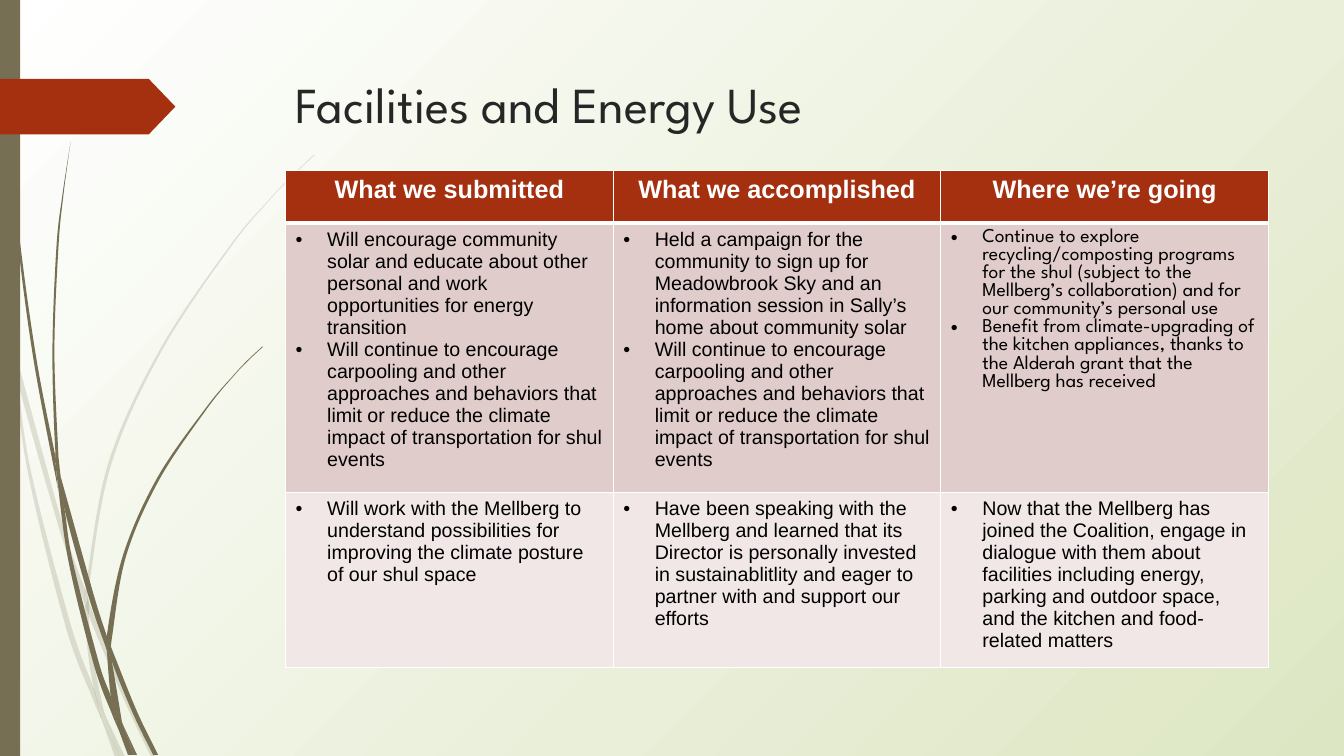
import lxml.etree
import pptx
import pptx.dml.color
import pptx.enum.shapes
import pptx.enum.text
import pptx.oxml
import pptx.oxml.ns
import pptx.util

Pt = pptx.util.Pt
qn = pptx.oxml.ns.qn
SubElement = lxml.etree.SubElement

COLORS = {
    "olive": "766F54", "rust": "A53010", "title": "262626",
    "black": "000000", "white": "FFFFFF", "mist": "DDE6C3",
    "rose": "E0CCCA", "blush": "F0E7E6",
}
SANS, DISPLAY = "Arial", "League Spartan"
CARPOOLING = ("Will continue to encourage carpooling and other approaches and behaviors "
              "that limit or reduce the climate impact of transportation for shul events")
HEADINGS = ["What we submitted", "What we accomplished", "Where we’re going"]
GOALS = [
    [
        ["Will encourage community solar and educate about other personal and work "
         "opportunities for energy transition", CARPOOLING],
        ["Held a campaign for the community to sign up for Meadowbrook Sky and an "
         "information session in Sally’s home about community solar", CARPOOLING],
        ["Continue to explore recycling/composting programs for the shul (subject to the "
         "Mellberg’s collaboration) and for our community’s personal use",
         "Benefit from climate-upgrading of the kitchen appliances, thanks to the Alderah "
         "grant that the Mellberg has received"],
    ],
    [
        ["Will work with the Mellberg to understand possibilities for improving the "
         "climate posture of our shul space"],
        ["Have been speaking with the Mellberg and learned that its Director is personally "
         "invested in sustainablitlity and eager to partner with and support our efforts"],
        ["Now that the Mellberg has joined the Coalition, engage in dialogue with them about "
         "facilities including energy, parking and outdoor space, and the kitchen and "
         "food-related matters"],
    ],
]

# Each piece of grass: one edge going down, the other going up, in units of 0.72 pt
PALE_GRASS = [
    ([(0, 282), (0, 299), (10, 344), (11, 350)], [(9, 322), (0, 282)]),
    ([(14, 345), (17, 376), (58, 522), (84, 599)], [(85, 586), (62, 520), (14, 345)]),
    ([(88, 596), (88, 610), (123, 694), (150, 751)], [(155, 751), (127, 692), (92, 607), (88, 596)]),
    ([(105, 711), (119, 751)], [(124, 751), (105, 711)]),
    ([(11, 350), (28, 470), (65, 621), (92, 693), (101, 714)],
     [(99, 707), (93, 683), (70, 619), (31, 469), (17, 376), (11, 350)]),
    ([(84, 599), (87, 646), (93, 683), (96, 692), (105, 711)],
     [(103, 706), (91, 646), (88, 610), (88, 608), (84, 599)]),
    ([(312, 153), (289, 175), (268, 197), (228, 244), (158, 348), (107, 461), (85, 584), (85, 586)],
     [(88, 596), (88, 584), (110, 462), (160, 349), (229, 245), (268, 198), (290, 175), (312, 154)]),
    ([(101, 714), (114, 751)], [(119, 751), (101, 714)]),
    ([(85, 586), (84, 599), (88, 608)], [(88, 610), (88, 596), (85, 586)]),
    ([(93, 683), (99, 707), (101, 714), (119, 751)], [(119, 751), (105, 711), (96, 692), (93, 683)]),
]
DARK_GRASS = [
    ([(3, 0), (4, 48), (7, 110), (17, 233), (33, 355), (56, 477), (57, 481)],
     [(55, 457), (55, 453), (36, 355), (19, 232), (8, 109), (5, 48), (4, 0)]),
    ([(60, 472), (64, 505), (88, 592), (106, 645)], [(106, 633), (106, 631), (93, 590), (60, 472)]),
    ([(110, 641), (111, 656), (132, 708), (152, 749)], [(157, 749), (136, 706), (113, 649), (110, 641)]),
    ([(57, 477), (68, 557), (93, 659), (111, 708), (117, 722)],
     [(116, 717), (110, 691), (98, 657), (72, 556), (64, 505), (57, 477)]),
    ([(70, 141), (62, 193), (56, 245), (52, 349), (55, 449), (60, 472)],
     [(58, 453), (54, 349), (58, 245), (63, 193), (70, 141)]),
    ([(122, 719), (133, 749)], [(136, 749), (122, 719)]),
    ([(55, 449), (55, 453), (57, 477), (64, 505)], [(60, 472), (55, 449)]),
    ([(260, 344), (245, 358), (231, 373), (204, 405), (156, 474), (122, 551), (106, 631), (110, 641)],
     [(111, 633), (125, 552), (158, 476), (205, 406), (231, 374), (245, 359), (261, 344)]),
    ([(117, 722), (127, 749)], [(131, 749), (117, 722)]),
    ([(106, 645), (110, 691), (116, 706), (122, 719)], [(121, 716), (111, 656), (109, 651), (106, 645)]),
    ([(106, 631), (106, 633), (106, 645), (109, 651), (111, 656)], [(110, 641), (106, 631)]),
    ([(110, 691), (116, 717), (117, 722), (130, 749)], [(133, 749), (122, 719), (116, 706), (110, 691)]),
]


def rgb(name):
    return pptx.dml.color.RGBColor.from_string(COLORS[name])


def bends(edge):
    """Bezier controls and end point of each span of a smooth curve through the edge."""
    padded = [edge[0], *edge, edge[-1]]
    for a, b, c, d in zip(padded, padded[1:], padded[2:], padded[3:]):
        yield (tuple(q + (r - p) / 6 for p, q, r in zip(a, b, c)),
               tuple(r - (s - q) / 6 for q, r, s in zip(b, c, d)), c)


def paint(shape, color, opacity=100):
    shape.shadow.inherit = False
    shape.line.fill.background()
    shape.fill.solid()
    shape.fill.fore_color.rgb = rgb(color)
    if opacity < 100:
        tint = shape.fill._xPr.find(qn("a:solidFill"))[0]
        SubElement(tint, qn("a:alpha"), val=str(opacity * 1000))


def add_grass(slide, down, up, opacity):
    corners = [(Pt(x * 0.72), Pt(y * 0.72)) for x, y in down + up]
    builder = slide.shapes.build_freeform(*corners[0])
    builder.add_line_segments(corners[1:], close=True)
    blade = builder.convert_to_shape()
    spans = [*bends(down), (down[-1], up[0], up[0]), *bends(up)]
    for line, span in zip(list(blade._element.iter(qn("a:lnTo"))), spans):
        curve = pptx.oxml.parse_xml(f'<a:cubicBezTo {pptx.oxml.ns.nsdecls("a")}/>')
        for x, y in span:
            SubElement(curve, qn("a:pt"), x=str(Pt(x * 0.72) - blade.left),
                       y=str(Pt(y * 0.72) - blade.top))
        line.getparent().replace(line, curve)
    paint(blade, "olive", opacity)


def add_block(slide, kind, left, top, width, height, color):
    block = slide.shapes.add_shape(kind, Pt(left), Pt(top), Pt(width), Pt(height))
    paint(block, color)
    return block


def write(frame, *texts, size, color, font=SANS, bold=False, centered=False, bullets=False):
    frame.word_wrap = True
    for index, text in enumerate(texts):
        paragraph = frame.add_paragraph() if index else frame.paragraphs[0]
        if centered:
            paragraph.alignment = pptx.enum.text.PP_ALIGN.CENTER
        run = paragraph.add_run()
        run.text = text
        run.font.size, run.font.name, run.font.bold = Pt(size), font, bold
        run.font.color.rgb = rgb(color)
        if bullets:
            properties = paragraph._p.get_or_add_pPr()
            properties.set("marL", str(Pt(22.5)))
            properties.set("indent", str(-Pt(22.5)))
            SubElement(properties, qn("a:buFont"), typeface=SANS)
            SubElement(properties, qn("a:buChar"), char="•")


def style_cell(cell, color, bottom=1):
    properties = cell._tc.get_or_add_tcPr()
    for side, weight in (("L", 1), ("R", 1), ("T", 1), ("B", bottom)):
        border = SubElement(properties, qn("a:ln" + side), w=str(Pt(weight)))
        fill = SubElement(border, qn("a:solidFill"))
        SubElement(fill, qn("a:srgbClr"), val=COLORS["white"])
    cell.fill.solid()
    cell.fill.fore_color.rgb = rgb(color)


def add_goals_table(slide):
    heights = [37.8, 97.2, 97.2]
    table = slide.shapes.add_table(3, 3, Pt(204), Pt(121.7), Pt(702), Pt(sum(heights))).table
    table.horz_banding = False
    for row, height in zip(table.rows, heights):
        row.height = Pt(height)
    for column, heading in enumerate(HEADINGS):
        table.columns[column].width = Pt(234)
        cell = table.cell(0, column)
        style_cell(cell, "rust", bottom=3)
        write(cell.text_frame, heading, size=18, color="white", bold=True, centered=True)
    for row, (goals, color) in enumerate(zip(GOALS, ("rose", "blush")), 1):
        for column, items in enumerate(goals):
            cell = table.cell(row, column)
            style_cell(cell, color)
            font = DISPLAY if (row, column) == (1, 2) else SANS
            write(cell.text_frame, *items, size=14, color="black", font=font, bullets=True)


def set_background(slide):
    """Radial gradient spreading from the top left corner."""
    fill = slide.background.fill
    fill.gradient()
    for stop, color, position in zip(fill.gradient_stops, ("white", "mist"), (0, 1)):
        stop.color.rgb = rgb(color)
        stop.position = position
    gradient = slide.background._cSld.find(".//" + qn("a:gradFill"))
    gradient.remove(gradient.find(qn("a:lin")))
    circle = SubElement(gradient, qn("a:path"))
    circle.set("path", "circle")
    SubElement(circle, qn("a:fillToRect"), r="100000", b="100000")


def main():
    deck = pptx.Presentation()
    deck.slide_width, deck.slide_height = Pt(960), Pt(540)
    slide = deck.slides.add_slide(deck.slide_layouts[6])
    set_background(slide)
    for grass, opacity in ((PALE_GRASS, 20), (DARK_GRASS, 100)):
        for down, up in grass:
            add_grass(slide, down, up, opacity)
    presets = pptx.enum.shapes.MSO_SHAPE
    add_block(slide, presets.RECTANGLE, 0, 0, 14.4, 540, "olive")
    pointer = add_block(slide, presets.PENTAGON, 0, 56.3, 125.3, 39.8, "rust")
    pointer.adjustments[0] = 0.48
    title = slide.shapes.add_textbox(Pt(204.3), Pt(49), Pt(702), Pt(100.8))
    write(title.text_frame, "Facilities and Energy Use", size=36, color="title", font=DISPLAY)
    add_goals_table(slide)
    deck.save("out.pptx")


if __name__ == "__main__":
    main()
